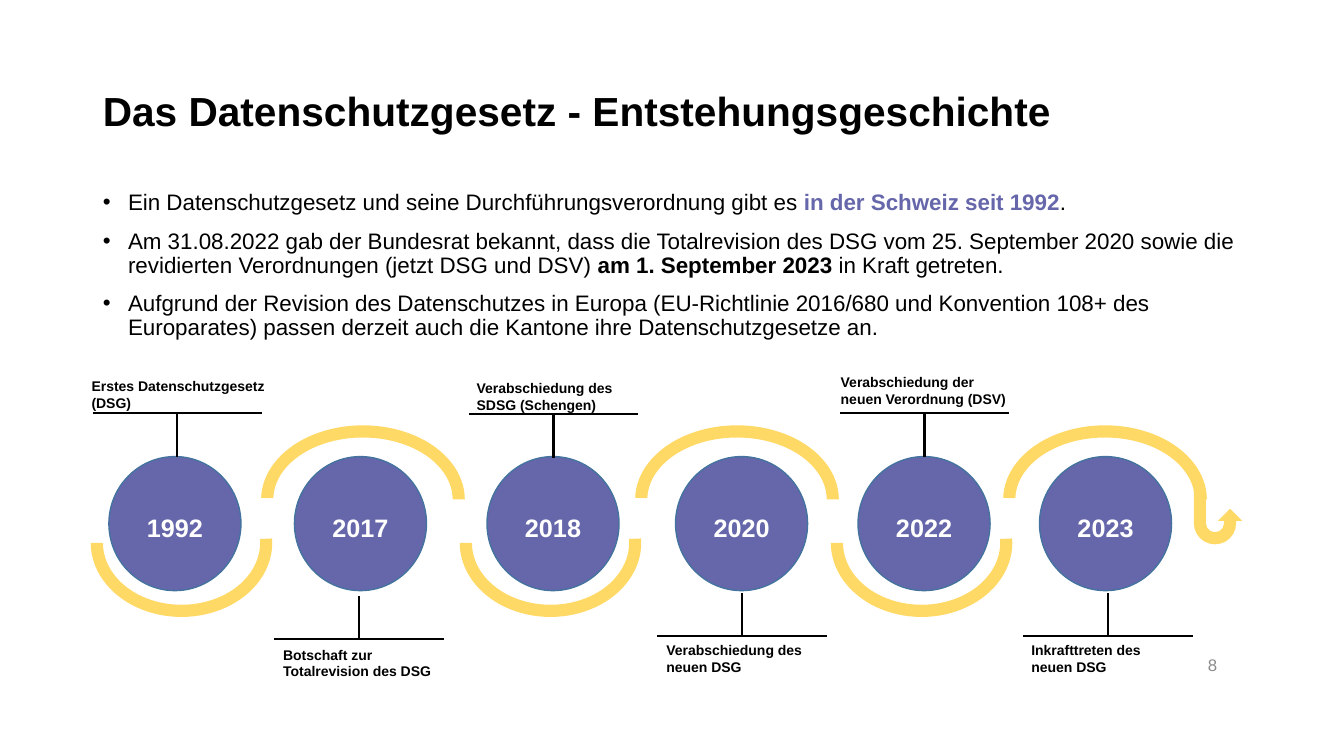
import pptx
import pptx.util
import pptx.dml.color
import pptx.enum.shapes
import pptx.enum.text
import pptx.oxml

COLORS = {"text": "000000", "violet": "6667AB", "rim": "43739E",
          "yellow": "FFD966", "white": "FFFFFF", "grey": "8C8C8C"}
SHAPES = pptx.enum.shapes.MSO_SHAPE
ALIGN = pptx.enum.text.PP_ALIGN
ANCHOR = pptx.enum.text.MSO_ANCHOR

deck = pptx.Presentation()
deck.slide_width = pptx.util.Inches(13.33)
deck.slide_height = pptx.util.Inches(7.5)
column = deck.slide_width / 13.33
row = deck.slide_height / 7.5
page = deck.slides.add_slide(deck.slide_layouts[1])


def area(left, top, width, height):
    """Turn columns and rows into a position and a size."""
    return [round(n * unit) for n, unit in
            zip((left, top, width, height), (column, row, column, row))]


def style(font, size, color, bold=False):
    font.name = "Arial"
    font.size = pptx.util.Pt(size)
    font.bold = bold
    font.color.rgb = pptx.dml.color.RGBColor.from_string(COLORS[color])


# Title and body placeholders
title, body = page.shapes.title, page.placeholders[1]
for holder, top, height in ((title, 0.4, 1.45), (body, 1.85, 1.85)):
    holder.left, holder.top, holder.width, holder.height = area(0.92, top, 11.5, height)
    holder.text_frame.auto_size = pptx.enum.text.MSO_AUTO_SIZE.NONE

title.text_frame.text = "Das Datenschutzgesetz - Entstehungsgeschichte"
title.text_frame.vertical_anchor = ANCHOR.MIDDLE
para = title.text_frame.paragraphs[0]
para.alignment = ALIGN.LEFT
para.line_spacing = 0.9
style(para.font, 29, "text", True)

# Bullets: plain text, emphasis, colour of the emphasis, plain text
bullets = [
    ("Ein Datenschutzgesetz und seine Durchführungsverordnung gibt es ",
     "in der Schweiz seit 1992", "violet", "."),
    ("Am 31.08.2022 gab der Bundesrat bekannt, dass die Totalrevision des DSG vom "
     "25. September 2020 sowie die revidierten Verordnungen (jetzt DSG und DSV) ",
     "am 1. September 2023", "text", " in Kraft getreten."),
    ("Aufgrund der Revision des Datenschutzes in Europa (EU-Richtlinie 2016/680 und "
     "Konvention 108+ des Europarates) passen derzeit auch die Kantone ihre "
     "Datenschutzgesetze an.", "", "text", ""),
]
indent = round(0.25 * column)
for number, (before, emphasis, color, after) in enumerate(bullets):
    para = body.text_frame.paragraphs[0] if number == 0 else body.text_frame.add_paragraph()
    para.line_spacing = 0.9
    para.space_before = pptx.util.Pt(10)
    properties = para._p.get_or_add_pPr()
    properties.set("marL", str(indent))
    properties.set("indent", str(-indent))
    for words, shade, bold in ((before, "text", False), (emphasis, color, True),
                               (after, "text", False)):
        if words:
            span = para.add_run()
            span.text = words
            style(span.font, 16, shade, bold)

# Slide number
box = page.shapes.add_textbox(*area(9.17, 6.4, 3, 0.4))
box.text_frame.vertical_anchor = ANCHOR.MIDDLE
para = box.text_frame.paragraphs[0]
para.text = "8"
para.alignment = ALIGN.RIGHT
style(para.font, 12, "grey")

# Milestones: year, circle left, arc left, stem, rail height, label area, label
milestones = [
    ("1992", 1.08, 0.9, 1.76, 4.1, (0.81, 3.7, 1.93), "Erstes Datenschutzgesetz (DSG)"),
    ("2017", 2.92, 2.59, 3.56, 6.34, (2.71, 6.36, 1.7), "Botschaft zur Totalrevision des DSG"),
    ("2018", 4.83, 4.56, 5.49, 4.11, (4.63, 3.72, 1.7), "Verabschiedung des SDSG (Schengen)"),
    ("2020", 6.7, 6.3, 7.36, 6.31, (6.51, 6.32, 1.71), "Verabschiedung des neuen DSG"),
    ("2022", 8.51, 8.24, 9.17, 4.1, (8.24, 3.66, 1.9), "Verabschiedung der neuen Verordnung (DSV)"),
    ("2023", 10.31, 9.95, 10.99, 6.31, (10.13, 6.32, 1.72), "Inkrafttreten des neuen DSG"),
]
bands = []
for number, (year, circle_left, arc_left, stem, rail, label_area, label) in enumerate(milestones):
    label_above = number % 2 == 0

    # Year circle
    circle = page.shapes.add_shape(SHAPES.OVAL, *area(circle_left, 4.53, 1.31, 1.33))
    circle.shadow.inherit = False
    circle.fill.solid()
    circle.fill.fore_color.rgb = pptx.dml.color.RGBColor.from_string(COLORS["violet"])
    circle.line.color.rgb = pptx.dml.color.RGBColor.from_string(COLORS["rim"])
    circle.line.width = pptx.util.Pt(1)
    circle.text_frame.margin_top = round(0.12 * row)
    circle.text_frame.vertical_anchor = ANCHOR.MIDDLE
    para = circle.text_frame.paragraphs[0]
    para.text = year
    para.alignment = ALIGN.CENTER
    style(para.font, 18, "white", True)

    # Arc on the side opposite the label
    arc_top, arc_width, start = (4.65, 1.8, 106.33) if label_above else (4.22, 2.02, 108.5)
    arc = page.shapes.add_shape(SHAPES.BLOCK_ARC, *area(arc_left, arc_top, arc_width, 1.47))
    arc.rotation = 180 if label_above else 0
    for index, value in enumerate((start, 0, 0.082)):
        arc.adjustments[index] = value
    bands.append(arc)

    # Stem and rail
    stem_end = rail + (0.43 if label_above else -0.43)
    for ends in ((stem, rail, stem, stem_end), (stem - 0.84, rail, stem + 0.84, rail)):
        line = page.shapes.add_connector(pptx.enum.shapes.MSO_CONNECTOR.STRAIGHT, *area(*ends))
        line.line.color.rgb = pptx.dml.color.RGBColor.from_string(COLORS["text"])
        line.line.width = pptx.util.Pt(1.5)
        line._element.spPr.append(pptx.oxml.parse_xml(
            '<a:effectLst xmlns:a="http://schemas.openxmlformats.org/drawingml/2006/main"/>'))

    # Label
    box = page.shapes.add_textbox(*area(*label_area, 0.43))
    box.text_frame.word_wrap = True
    para = box.text_frame.paragraphs[0]
    para.text = label
    style(para.font, 10, "text", True)

# Closing arrow
arrow = page.shapes.add_shape(SHAPES.U_TURN_ARROW, *area(11.84, 4.87, 0.48, 0.53))
arrow.rotation = 180
arrow._element.spPr.get_or_add_xfrm().set("flipH", "1")
for index, value in enumerate((0.25, 0.25, 0.25, 0.438, 0.667)):
    arrow.adjustments[index] = value

for band in bands + [arrow]:
    band.shadow.inherit = False
    band.fill.solid()
    band.fill.fore_color.rgb = pptx.dml.color.RGBColor.from_string(COLORS["yellow"])
    band.line.fill.background()

deck.save("out.pptx")
